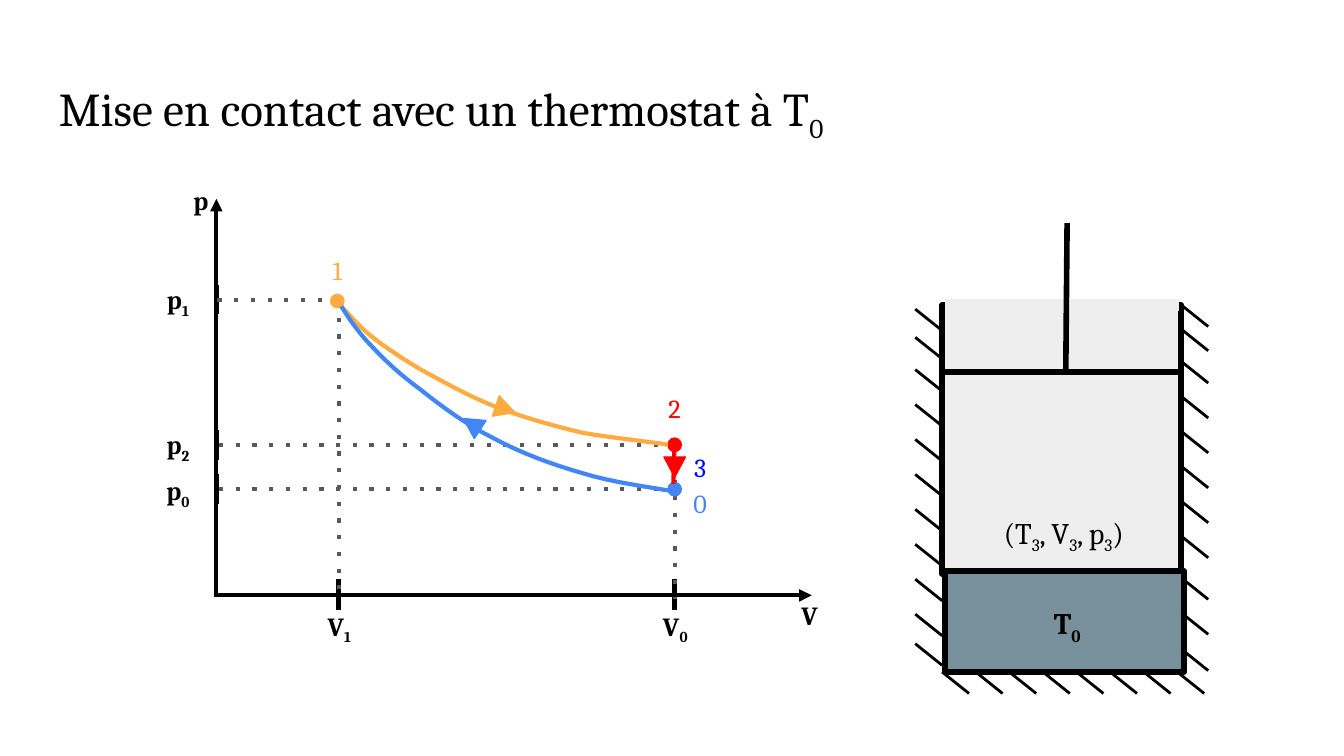
"""Slide: cycle in the p-V plane beside a piston in contact with a thermostat."""
from lxml import etree
from pptx import Presentation
from pptx import util as u
from pptx.dml.color import RGBColor
from pptx.enum import shapes, text
from pptx.oxml import ns

BLACK = RGBColor(0, 0, 0)
WHITE = RGBColor(0xFF, 0xFF, 0xFF)
DOT = RGBColor(0x59, 0x59, 0x59)
ORANGE = RGBColor(0xFF, 0xAB, 0x40)
RED = RGBColor(0xFF, 0, 0)
BLUE = RGBColor(0x42, 0x85, 0xF4)
DARK = RGBColor(0, 0, 0xFF)
GAS = RGBColor(0xEE, 0xEE, 0xEE)
BATH = RGBColor(0x78, 0x90, 0x9C)

AXIS, V1, V0, BASE = 1.61, 2.52, 5.02, 4.43
P1, P2, P0 = 2.23, 3.31, 3.64
AXES = [(AXIS, 4.44, AXIS, 1.48), (1.59, BASE, 6.04, BASE)]
TICKS = [(x, 4.31, x, 4.54) for x in (V1, V0)]
TICKS += [(AXIS, y - 0.11, AXIS, y + 0.11) for y in (P1, P2, P0)]
GUIDES = [(V1, 2.24, V1, 4.44), (V0, 3.32, V0, 4.46), (V0, P0, 1.59, P0),
          (V1, P1, AXIS, P1), (V0, P2, 1.59, P2)]
DOTS = [(2.46, 2.19, ORANGE), (4.97, 3.26, RED), (4.97, 3.59, BLUE)]
HEADS = [(3.43, 3.08, 303.1, BLUE), (3.68, 2.97, 108.7, ORANGE),
         (4.94, 3.4, 179.9, RED)]
CURVES = [
    (ORANGE, [(2.54, 2.28), (2.57, 2.31), (2.66, 2.42), (2.76, 2.5),
              (2.86, 2.58), (2.98, 2.66), (3.13, 2.75), (3.28, 2.83),
              (3.47, 2.94), (3.67, 3.02), (3.87, 3.1), (4.12, 3.17),
              (4.33, 3.22), (4.55, 3.26), (4.87, 3.29), (4.97, 3.31)]),
    (BLUE, [(2.54, 2.28), (2.57, 2.33), (2.66, 2.47), (2.76, 2.57),
            (2.86, 2.68), (2.98, 2.79), (3.13, 2.9), (3.28, 3.02),
            (3.47, 3.16), (3.67, 3.26), (3.87, 3.37), (4.12, 3.46),
            (4.33, 3.52), (4.55, 3.59), (4.87, 3.63), (4.97, 3.65)]),
]
NAMES = [("p_0", 1.06, 3.43), ("p_2", 1.06, 3.09), ("p_1", 1.06, 2.01),
         ("V_1", 2.26, 4.44), ("V_0", 4.76, 4.44), ("V", 5.76, 4.36),
         ("p", 1.23, 1.27)]
STATES = [("1", 2.21, 1.79, ORANGE), ("0", 4.91, 3.53, BLUE),
          ("2", 4.72, 2.82, RED), ("3", 4.91, 3.26, DARK)]
STEPS = [0.26 * i for i in range(6)]
RIGHT = [2.27, 2.45] + [2.69 + s for s in STEPS] + [4.3, 4.56, 4.83]
LEFT = [2.3, 2.51] + [2.75 + s for s in STEPS] + [4.31, 4.57, 4.79]
HATCH = [(7.01 + 0.25 * i, 5) for i in range(8)]
HATCH += [(8.79, y) for y in RIGHT] + [(6.81, y) for y in LEFT]

prs = Presentation()
prs.slide_width, prs.slide_height = u.Inches(10), u.Inches(5.625)
slide = prs.slides.add_slide(prs.slide_layouts[6])
slide.background.fill.solid()
slide.background.fill.fore_color.rgb = WHITE
items = slide.shapes


def write(words, x, y, w, h, size=14, color=BLACK, bold=False,
          align=text.PP_ALIGN.CENTER, grow=True):
    box = items.add_textbox(*map(u.Inches, (x, y, w, h)))
    frame = box.text_frame
    frame.word_wrap = True
    if grow:
        frame.auto_size = text.MSO_AUTO_SIZE.SHAPE_TO_FIT_TEXT
    frame.margin_left = frame.margin_right = u.Inches(0.1)
    frame.margin_top = frame.margin_bottom = u.Inches(0.1)
    para = frame.paragraphs[0]
    para.alignment = align
    first, *rest = words.split("_")
    parts = [(first, False)]
    for part in rest:
        parts += [(part[0], True), (part[1:], False)]
    for part, sub in parts:
        if part:
            run = para.add_run()
            run.text = part
            run.font.name, run.font.size = "Cambria", u.Pt(size)
            run.font.bold, run.font.color.rgb = bold, color
            if sub:
                run.font._element.set("baseline", "-25000")


def stroke(ends, color=BLACK, width=3.0, dotted=False, arrow=False):
    line = items.add_connector(shapes.MSO_CONNECTOR.STRAIGHT,
                               *map(u.Inches, ends))
    line.line.color.rgb, line.line.width = color, u.Pt(width)
    edge = line.line._get_or_add_ln()
    if dotted:
        etree.SubElement(edge, ns.qn("a:prstDash")).set("val", "dot")
    if arrow:
        etree.SubElement(edge, ns.qn("a:tailEnd")).set("type", "triangle")
    etree.SubElement(line._element.spPr, ns.qn("a:effectLst"))


def solid(kind, x, y, w, h, fill, edge, width=0.75, turn=0):
    shape = items.add_shape(kind, *map(u.Inches, (x, y, w, h)))
    shape.shadow.inherit = False
    shape.fill.solid()
    shape.fill.fore_color.rgb = fill
    shape.line.color.rgb, shape.line.width = edge, u.Pt(width)
    shape.rotation = turn


def bezier(a, b, c, d, t):
    s = 1 - t
    return [u.Inches(s**3 * i + 3 * s * s * t * j + 3 * s * t * t * k + t**3 * m)
            for i, j, k, m in zip(a, b, c, d)]


def curve(color, knots):
    points = [bezier(*knots[i:i + 4], n / 8)
              for i in range(0, len(knots) - 1, 3) for n in range(1, 9)]
    pen = items.build_freeform(*map(u.Inches, knots[0]))
    pen.add_line_segments(points, close=False)
    shape = pen.convert_to_shape()
    shape.shadow.inherit = False
    shape.fill.background()
    shape.line.color.rgb, shape.line.width = color, u.Pt(2.25)


kind = shapes.MSO_SHAPE
write("Mise en contact avec un thermostat à T_0", 0.34, 0.49, 9.32, 0.63,
      size=25.2, align=text.PP_ALIGN.LEFT, grow=False)

for ends in AXES:
    stroke(ends, width=2.25, arrow=True)
for ends in TICKS:
    stroke(ends)
for ends in GUIDES:
    stroke(ends, DOT, 2.25, dotted=True)
for x, y, color in DOTS:
    solid(kind.OVAL, x, y, 0.1, 0.1, color, color)
for words, x, y in NAMES:
    write(words, x, y, 0.53, 0.44, bold=True)
for words, x, y, color in STATES:
    write(words, x, y, 0.6, 0.44, color=color)
stroke((V0, 3.26, 5.01, 3.6), RED, 2.25)
for color, knots in CURVES:
    curve(color, knots)
for x, y, turn, color in HEADS:
    solid(kind.ISOSCELES_TRIANGLE, x, y, 0.16, 0.15, color, color, turn=turn)

solid(kind.RECTANGLE, 7.01, 2.27, 1.78, 2, GAS, BLACK, 3)
stroke((7.03, 2.27, 8.77, 2.27), GAS, 6)
stroke((7.02, 2.77, 8.79, 2.77))
stroke((7.94, 1.66, 7.93, 2.77))
write("(T_3, V_3, p_3) ", 7.26, 3.73, 1.36, 0.47, size=16)
solid(kind.RECTANGLE, 7.03, 4.25, 1.78, 0.75, BATH, BLACK, 3)
for x, y in HATCH:
    stroke((x, y, x + 0.2, y + 0.16), width=1.5)
write("T_0", 7.64, 4.4, 0.6, 0.47, size=16, bold=True)

prs.save("out.pptx")
